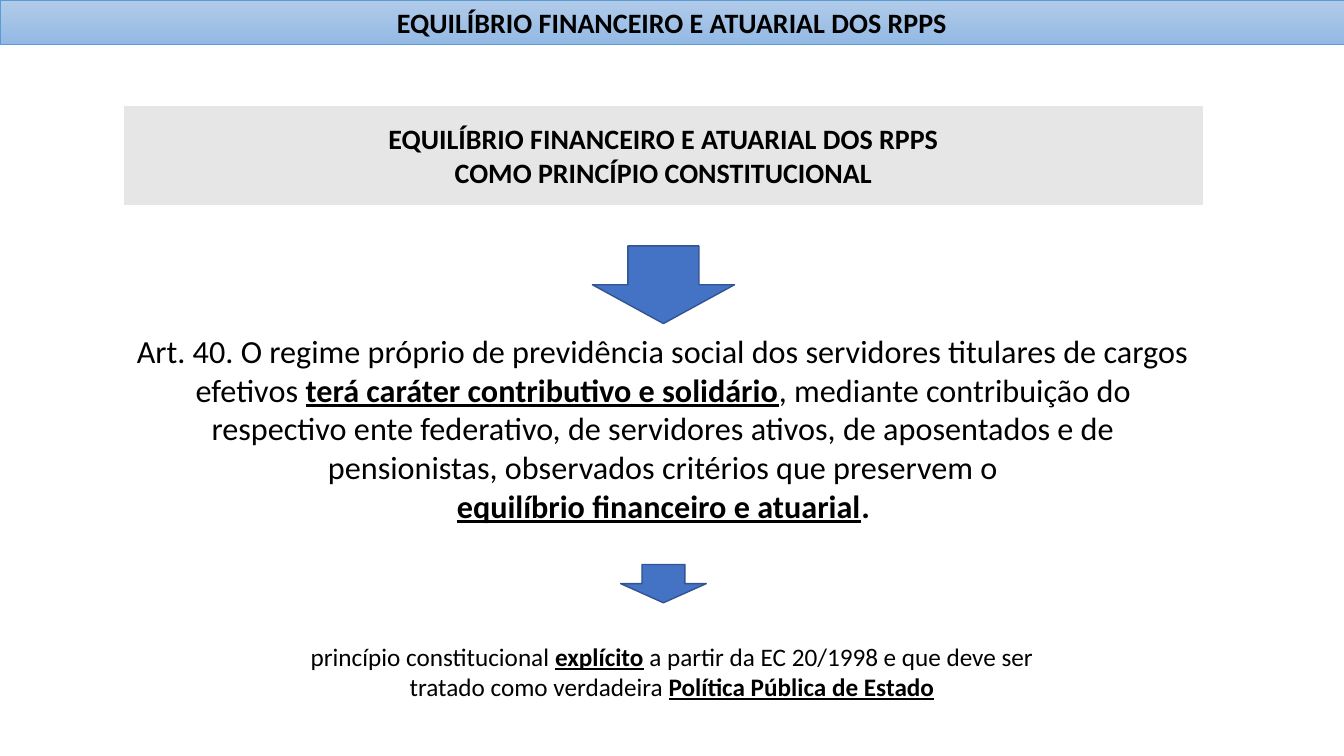
import pptx
import pptx.dml.color
import pptx.enum.shapes
import pptx.enum.text
import pptx.util

Inches = pptx.util.Inches
Pt = pptx.util.Pt
MIDDLE = pptx.enum.text.MSO_ANCHOR.MIDDLE
TOP = pptx.enum.text.MSO_ANCHOR.TOP
SHAPES = pptx.enum.shapes.MSO_SHAPE

FONT = "Calibri"
SLIDE_SIZE = (13.33, 7.5)
BAND_COLORS = ("B1CBE9", "93B9E4")

# Each paragraph is a list of (text, bold, underline) runs.
TITLE = [[("EQUILÍBRIO FINANCEIRO E ATUARIAL DOS RPPS", True, False)]]
PRINCIPLE = TITLE + [[("COMO PRINCÍPIO CONSTITUCIONAL", True, False)]]
ARTICLE = [
    [
        ("Art. 40. O regime próprio de previdência social dos servidores "
         "titulares de cargos efetivos ", False, False),
        ("terá caráter contributivo e solidário", True, True),
        (", mediante contribuição do respectivo ente federativo, de servidores "
         "ativos, de aposentados e de pensionistas, observados critérios que "
         "preservem o", False, False),
    ],
    [("equilíbrio financeiro e atuarial", True, True), (".", True, False)],
]
CONCLUSION = [[
    ("princípio constitucional ", False, False),
    ("explícito", True, True),
    (" a partir da EC 20/1998 e que deve ser tratado como verdadeira ", False, False),
    ("Política Pública de Estado", True, True),
]]

COLUMN_LEFT, COLUMN_WIDTH = 1.22, 10.72
ARROWS = [(2.44, 1.41, 0.77), (5.6, 0.85, 0.38)]  # top, width, height


def color(hex_value):
    return pptx.dml.color.RGBColor.from_string(hex_value)


def write(shape, paragraphs, size, anchor=TOP):
    frame = shape.text_frame
    frame.word_wrap = True
    frame.auto_size = pptx.enum.text.MSO_AUTO_SIZE.NONE
    frame.vertical_anchor = anchor
    for index, runs in enumerate(paragraphs):
        paragraph = frame.add_paragraph() if index else frame.paragraphs[0]
        paragraph.alignment = pptx.enum.text.PP_ALIGN.CENTER
        for text, bold, underline in runs:
            run = paragraph.add_run()
            run.text = text
            run.font.name = FONT
            run.font.size = Pt(size)
            run.font.bold = bold
            run.font.underline = underline
            run.font.color.rgb = color("000000")


def set_line(shape, hex_value, width):
    shape.line.color.rgb = color(hex_value)
    shape.line.width = Pt(width)


def add_filled(slide, kind, box, fill, line):
    shape = slide.shapes.add_shape(kind, *map(Inches, box))
    shape.shadow.inherit = False
    shape.fill.solid()
    shape.fill.fore_color.rgb = color(fill)
    set_line(shape, line, 1)
    return shape


def add_title_band(slide):
    band = slide.shapes.title
    band.left, band.top = 0, 0
    band.width, band.height = Inches(SLIDE_SIZE[0]), Inches(0.44)
    band.fill.gradient()
    band.fill.gradient_angle = 270
    for stop, hex_value, position in zip(band.fill.gradient_stops, BAND_COLORS, (0, 1)):
        stop.color.rgb = color(hex_value)
        stop.position = position
    set_line(band, "5B9BD5", 0.5)
    write(band, TITLE, 20)


def main():
    presentation = pptx.Presentation()
    presentation.slide_width, presentation.slide_height = map(Inches, SLIDE_SIZE)
    slide = presentation.slides.add_slide(
        presentation.slide_layouts.get_by_name("Title Only"))

    add_title_band(slide)

    panel = add_filled(slide, SHAPES.RECTANGLE,
                       (COLUMN_LEFT, 1.04, COLUMN_WIDTH, 1), "E7E6E6", "FFFFFF")
    write(panel, PRINCIPLE, 20, MIDDLE)

    center = COLUMN_LEFT + COLUMN_WIDTH / 2
    for top, width, height in ARROWS:
        add_filled(slide, SHAPES.DOWN_ARROW,
                   (center - width / 2, top, width, height), "4472C4", "325491")

    for box, paragraphs, size in [
        ((COLUMN_LEFT, 3.24, COLUMN_WIDTH, 2.04), ARTICLE, 23),
        ((2.65, 6.31, 8.03, 1), CONCLUSION, 18),
    ]:
        write(slide.shapes.add_textbox(*map(Inches, box)), paragraphs, size)

    presentation.save("out.pptx")


if __name__ == "__main__":
    main()
